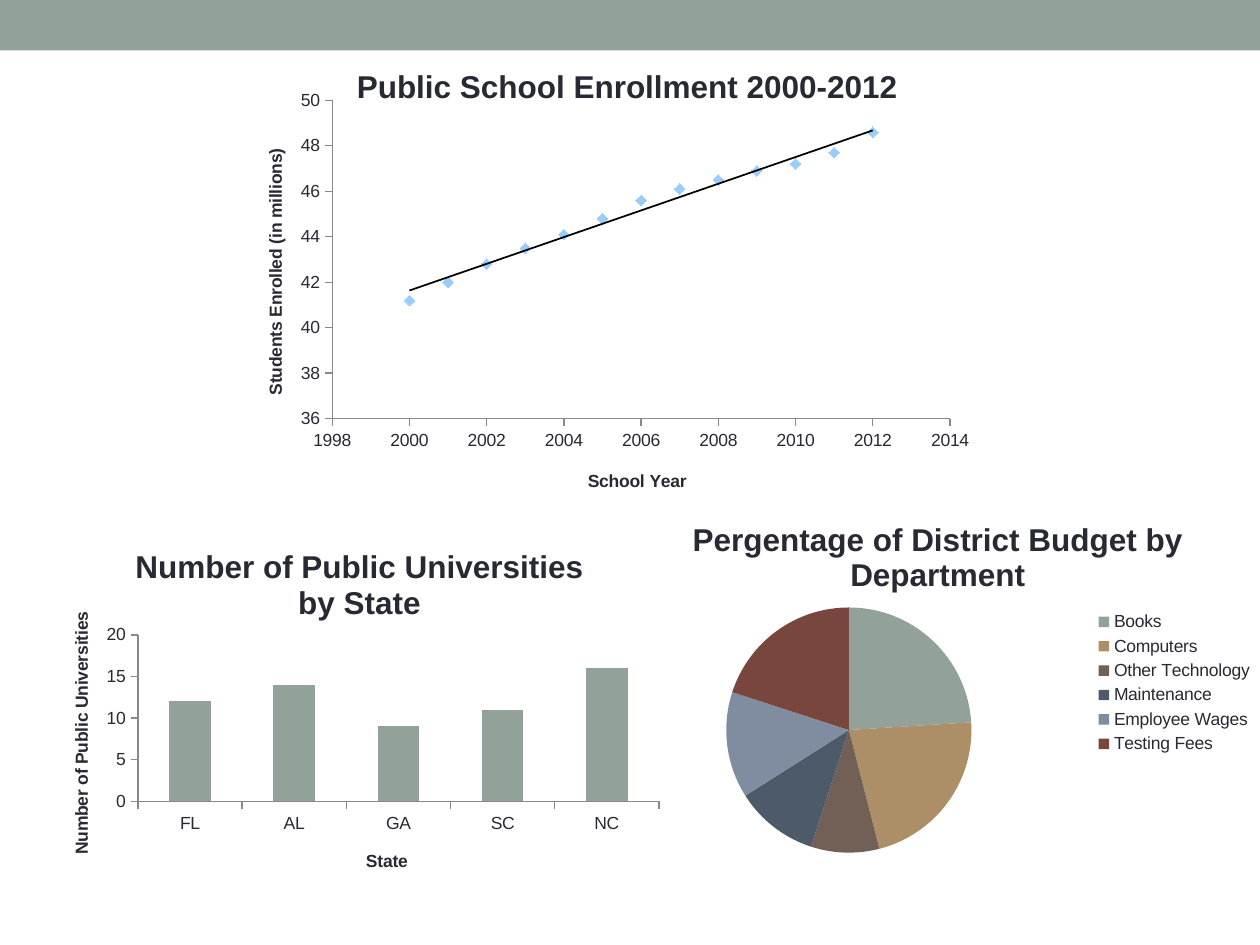
"""Build a slide with three charts about public education."""
from lxml.etree import SubElement
from pptx import Presentation
from pptx.chart.data import CategoryChartData, XyChartData
from pptx.dml.color import RGBColor
from pptx.enum.chart import XL_CHART_TYPE, XL_LEGEND_POSITION, XL_MARKER_STYLE, XL_TICK_MARK
from pptx.enum.shapes import MSO_SHAPE
from pptx.oxml import parse_xml
from pptx.oxml.ns import nsdecls, qn
from pptx.util import Inches, Pt


def paint(fill, color):
    fill.solid()
    fill.fore_color.rgb = RGBColor.from_string(color)


def place(part, index, **bounds):
    for old in part.findall(qn("c:layout")):
        part.remove(old)
    layout = part.makeelement(qn("c:layout"))
    part.insert(index, layout)
    manual = SubElement(layout, qn("c:manualLayout"))
    if part.tag == qn("c:plotArea"):
        SubElement(manual, qn("c:layoutTarget")).set("val", "inner")
    for side in ("x", "y"):
        SubElement(manual, qn(f"c:{side}Mode")).set("val", "edge")
    for side, share in bounds.items():
        SubElement(manual, qn(f"c:{side}")).set("val", str(share))


INK, SAGE, GRAY = "292934", "93A299", "898989"

deck = Presentation()
deck.slide_width, deck.slide_height = Inches(10), Inches(7.5)
slide = deck.slides.add_slide(deck.slide_layouts[6])

band = slide.shapes.add_shape(MSO_SHAPE.RECTANGLE, 0, 0, Inches(10), Inches(0.4))
band.shadow.inherit = False
paint(band.fill, SAGE)
band.line.fill.background()

enrollment_data = XyChartData()
enrollment_series = enrollment_data.add_series("Series 1")
millions = [41.2, 42, 42.8, 43.5, 44.1, 44.8, 45.6, 46.1, 46.5, 46.9, 47.2, 47.7, 48.6]
for year, students in enumerate(millions, 2000):
    enrollment_series.add_data_point(year, students)

budget_data = CategoryChartData()
budget_data.categories = ["Books", "Computers", "Other Technology", "Maintenance",
                          "Employee Wages", "Testing Fees"]
budget_data.add_series("Series 1", [24, 22, 9, 11, 14, 20])

university_data = CategoryChartData()
university_data.categories = ["FL", "AL", "GA", "SC", "NC"]
university_data.add_series("Series 1", [12, 14, 9, 11, 16])

panels = [
    (XL_CHART_TYPE.XY_SCATTER, enrollment_data, (1.83, 0.08, 5.98, 3.98),
     "Public School Enrollment 2000-2012", (0.16, 0.1), (0.135, 0.18, 0.82, 0.635)),
    (XL_CHART_TYPE.PIE, budget_data, (4.83, 3.92, 5.19, 3),
     "Pergentage of District Budget by Department", (0.12, 0.05), (0.18, 0.3, 0.375, 0.65)),
    (XL_CHART_TYPE.COLUMN_CLUSTERED, university_data, (0.33, 4.08, 5, 3),
     "Number of Public Universities by State", (0.14, 0.07), (0.153, 0.32, 0.827, 0.44)),
]
charts = []
for kind, data, frame, heading, corner, plot_box in panels:
    chart = slide.shapes.add_chart(kind, *map(Inches, frame), data).chart
    chart.font.name, chart.font.size = "Arial", Pt(10)
    paint(chart.font.fill, INK)
    chart.has_legend = False
    chart.plots[0].vary_by_categories = kind == XL_CHART_TYPE.PIE
    title = chart.chart_title
    headline = title.text_frame.paragraphs[0].add_run()
    headline.text = heading
    headline.font.name, headline.font.size, headline.font.bold = "Arial", Pt(18), True
    paint(headline.font.fill, INK)
    place(title.element, 1, **dict(zip("xy", corner)))
    place(chart.element.xpath("c:chart/c:plotArea")[0], 0, **dict(zip("xywh", plot_box)))
    charts.append(chart)
enrollment, budget, universities = charts

axes = [
    (enrollment.category_axis, "School Year", (0.47, 0.91), 1998, 2014, 2),
    (enrollment.value_axis, "Students Enrolled (in millions)", (0.04, 0.27), 36, 50, 2),
    (universities.category_axis, "State", (0.51, 0.88), None, None, None),
    (universities.value_axis, "Number of Public Universities", (0.04, 0.25), 0, 20, 5),
]
for axis, caption, corner, low, high, step in axes:
    axis.has_major_gridlines = False
    axis.major_tick_mark, axis.minor_tick_mark = XL_TICK_MARK.OUTSIDE, XL_TICK_MARK.NONE
    axis.format.line.width = Pt(0.75)
    paint(axis.format.line.fill, GRAY)
    axis.tick_labels.font.size = Pt(10)
    if step:
        axis.minimum_scale, axis.maximum_scale, axis.major_unit = low, high, step
    label = axis.axis_title.text_frame.paragraphs[0].add_run()
    label.text = caption
    label.font.name, label.font.size, label.font.bold = "Arial", Pt(10), True
    paint(label.font.fill, INK)
    place(axis.axis_title.element, 1, **dict(zip("xy", corner)))

students = enrollment.plots[0].series[0]
students.format.line.fill.background()
students.marker.style, students.marker.size = XL_MARKER_STYLE.DIAMOND, 6
paint(students.marker.format.fill, "99CCFF")
students.marker.format.line.fill.background()
trend = parse_xml(
    f'<c:trendline {nsdecls("c", "a")}><c:spPr><a:ln w="12700"><a:solidFill>'
    '<a:srgbClr val="000000"/></a:solidFill></a:ln></c:spPr>'
    '<c:trendlineType val="linear"/><c:dispRSqr val="0"/><c:dispEq val="0"/></c:trendline>')
enrollment.element.xpath(".//c:ser/c:xVal")[0].addprevious(trend)

slices = budget.plots[0].series[0].points
for index, color in enumerate([SAGE, "AD8F67", "726056", "4C5A6A", "808DA0", "79463D"]):
    paint(slices[index].format.fill, color)
    slices[index].format.line.fill.background()
budget.has_legend = True
budget.legend.position = XL_LEGEND_POSITION.RIGHT
budget.legend.include_in_layout = False
place(budget.element.xpath("c:chart/c:legend")[0], 1, x=0.74, y=0.3, w=0.25, h=0.4)

universities.plots[0].gap_width = 150
paint(universities.plots[0].series[0].format.fill, SAGE)

deck.save("out.pptx")
